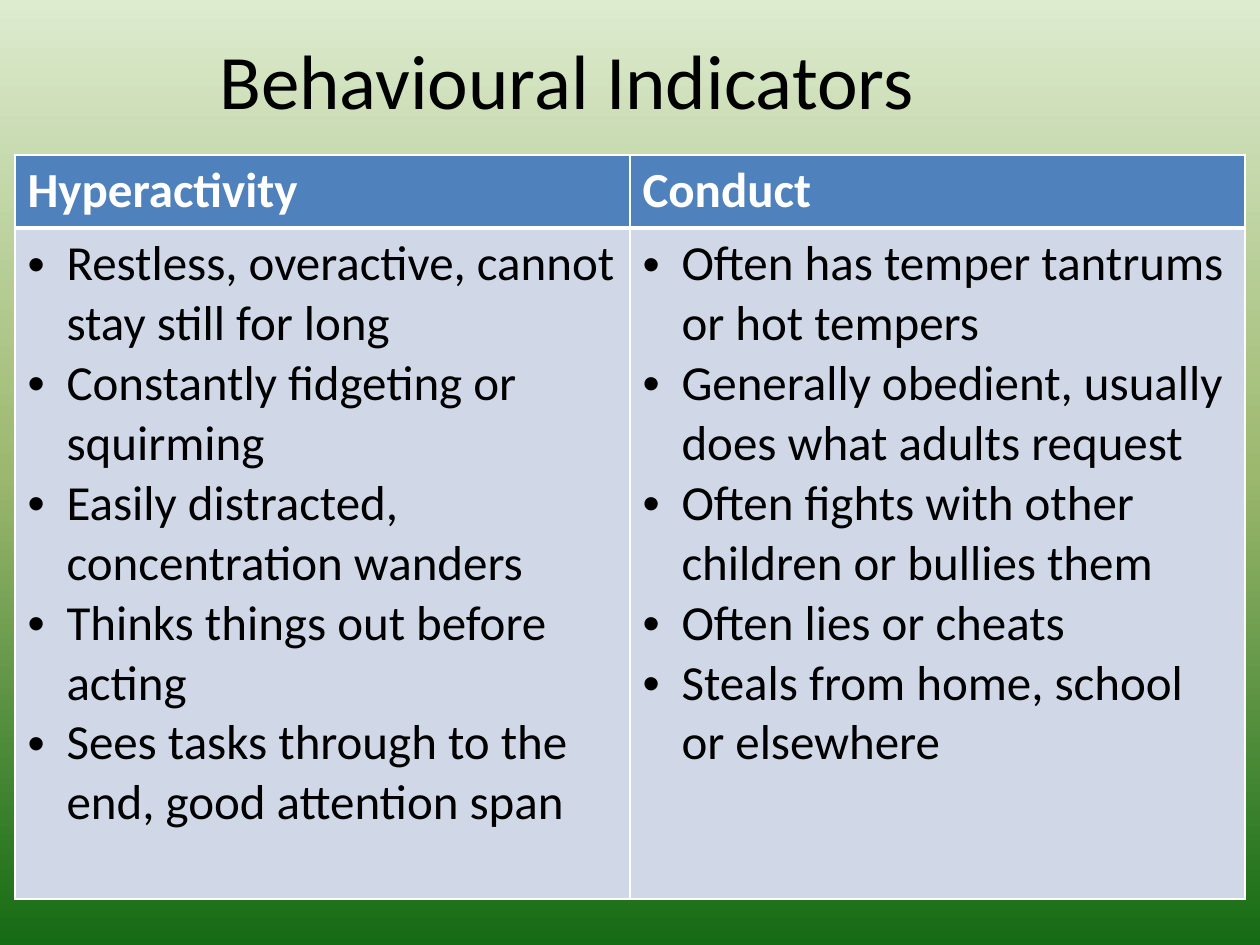
from copy import deepcopy

from lxml import etree
from pptx import Presentation
from pptx.dml.color import RGBColor
from pptx.enum import text
from pptx.oxml.ns import qn
from pptx.util import Pt

PX = 914400 // 126
SLIDE_SIZE = (1260, 945)
TITLE_BOX = (0, 0, 1134, 158)
TABLE_LEFT, TABLE_TOP = 15, 155
COLUMN_WIDTH = 615
ROW_HEIGHTS = (73, 671)
INDENT = 39
FONT = "Calibri"

BLACK = RGBColor(0x00, 0x00, 0x00)
WHITE = RGBColor(0xFF, 0xFF, 0xFF)
HEADER_BLUE = RGBColor(0x4F, 0x81, 0xBD)
BODY_BLUE = RGBColor(0xD0, 0xD8, 0xE8)
GRADIENT = [
    (0, RGBColor(0xDD, 0xEB, 0xCF)),
    (0.5, RGBColor(0x9C, 0xB8, 0x6E)),
    (1, RGBColor(0x15, 0x6B, 0x13)),
]

TITLE = "Behavioural Indicators"
INDICATORS = {
    "Hyperactivity": [
        "Restless, overactive, cannot stay still for long",
        "Constantly fidgeting or squirming",
        "Easily distracted, concentration wanders",
        "Thinks things out before acting",
        "Sees tasks through to the end, good attention span",
    ],
    "Conduct": [
        "Often has temper tantrums or hot tempers",
        "Generally obedient, usually does what adults request",
        "Often fights with other children or bullies them",
        "Often lies or cheats",
        "Steals from home, school or elsewhere",
    ],
}


def paint_background(slide):
    fill = slide.background.fill
    fill.gradient()
    fill.gradient_angle = 270
    stops = next(slide.element.iter(qn("a:gsLst")))
    stops.append(deepcopy(stops[-1]))
    for stop, (position, colour) in zip(fill.gradient_stops, GRADIENT):
        stop.position = position
        stop.color.rgb = colour


def format_runs(paragraph, size, colour, bold=False):
    for run in paragraph.runs:
        run.font.name = FONT
        run.font.size = Pt(size)
        run.font.bold = bold
        run.font.color.rgb = colour


def add_bullet(paragraph):
    properties = paragraph._p.get_or_add_pPr()
    properties.set("marL", str(INDENT * PX))
    properties.set("indent", str(-INDENT * PX))
    etree.SubElement(properties, qn("a:buFont")).set("typeface", "Arial")
    etree.SubElement(properties, qn("a:buChar")).set("char", "•")


def add_borders(cell, widths):
    """Draw white borders; widths are points for left, right, top, bottom."""
    properties = cell._tc.get_or_add_tcPr()
    for place, (side, width) in enumerate(zip("LRTB", widths)):
        line = etree.Element(qn(f"a:ln{side}"), w=str(Pt(width)))
        solid = etree.SubElement(line, qn("a:solidFill"))
        etree.SubElement(solid, qn("a:srgbClr")).set("val", str(WHITE))
        properties.insert(place, line)


def fill_cell(cell, lines, fill, colour, borders, is_header):
    cell.text_frame.text = "\n".join(lines)
    cell.fill.solid()
    cell.fill.fore_color.rgb = fill
    add_borders(cell, borders)
    for paragraph in cell.text_frame.paragraphs:
        format_runs(paragraph, 28, colour, bold=is_header)
        if not is_header:
            add_bullet(paragraph)


def add_indicator_table(slide):
    box = (TABLE_LEFT, TABLE_TOP, COLUMN_WIDTH * len(INDICATORS), sum(ROW_HEIGHTS))
    table = slide.shapes.add_table(
        len(ROW_HEIGHTS), len(INDICATORS), *(v * PX for v in box)
    ).table
    for row, height in zip(table.rows, ROW_HEIGHTS):
        row.height = height * PX
    for column, (heading, behaviours) in enumerate(INDICATORS.items()):
        table.columns[column].width = COLUMN_WIDTH * PX
        fill_cell(table.cell(0, column), [heading], HEADER_BLUE, WHITE, (1, 1, 1, 3), True)
        fill_cell(table.cell(1, column), behaviours, BODY_BLUE, BLACK, (1, 1, 3, 1), False)


def main():
    deck = Presentation()
    deck.slide_width, deck.slide_height = (v * PX for v in SLIDE_SIZE)
    slide = deck.slides.add_slide(deck.slide_layouts[5])
    paint_background(slide)

    title = slide.shapes.title
    title.left, title.top, title.width, title.height = (v * PX for v in TITLE_BOX)
    title.text_frame.text = TITLE
    title.text_frame.vertical_anchor = text.MSO_ANCHOR.MIDDLE
    heading = title.text_frame.paragraphs[0]
    heading.alignment = text.PP_ALIGN.CENTER
    format_runs(heading, 44, BLACK)

    add_indicator_table(slide)
    deck.save("out.pptx")


if __name__ == "__main__":
    main()
